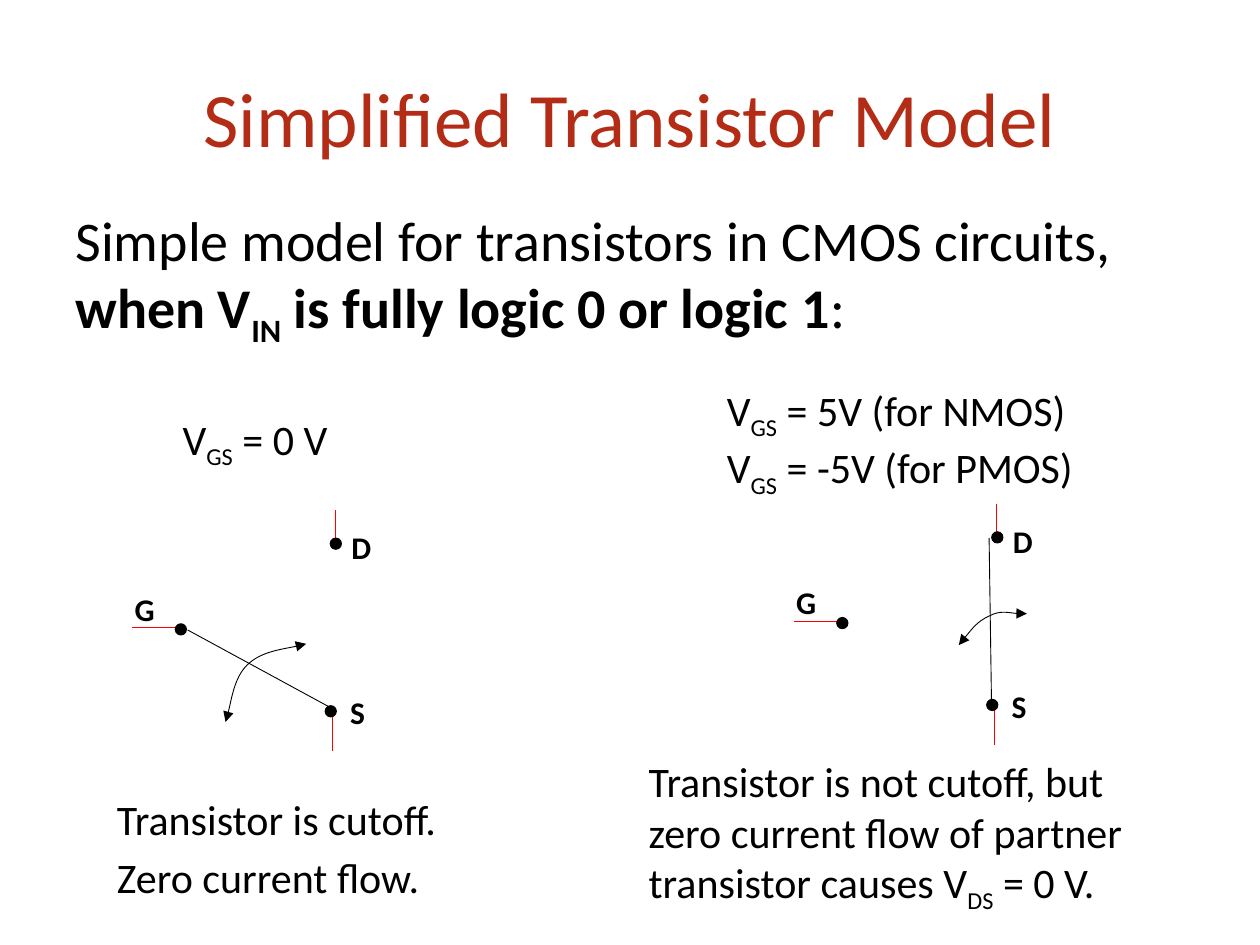
from lxml.etree import SubElement
from pptx import Presentation
from pptx.dml.color import RGBColor
from pptx.enum.shapes import MSO_CONNECTOR, MSO_SHAPE
from pptx.enum.text import MSO_ANCHOR, PP_ALIGN
from pptx.oxml.ns import qn
from pptx.util import Inches, Pt

BLACK = RGBColor(0x00, 0x00, 0x00)
RED = RGBColor(0xFF, 0x00, 0x00)
TITLE_RED = RGBColor(0xB3, 0x2C, 0x16)
DOT_SIZE = 0.09
LABEL_HEIGHT = 0.43


def add_text(slide, box, paragraphs, size, color=BLACK, bold=None, wrap=True):
    """Add a text box; each paragraph is a list of (text, style) runs, where
    style may hold "b" for bold and "_" for subscript."""
    shape = slide.shapes.add_textbox(*map(Inches, box))
    frame = shape.text_frame
    frame.word_wrap = wrap
    for index, runs in enumerate(paragraphs):
        paragraph = frame.paragraphs[0] if index == 0 else frame.add_paragraph()
        paragraph.font.name = "Calibri"
        paragraph.font.size = Pt(size)
        paragraph.font.color.rgb = color
        paragraph.font.bold = bold
        for text, style in runs:
            run = paragraph.add_run()
            run.text = text
            if "b" in style:
                run.font.bold = True
            if "_" in style:
                run.font._element.set("baseline", "-25000")
    return frame


def add_line(slide, start, end, color):
    line = slide.shapes.add_connector(
        MSO_CONNECTOR.STRAIGHT, *map(Inches, (*start, *end)))
    line.line.color.rgb = color
    line.line.width = Pt(0.5)
    SubElement(line._element.spPr, qn("a:effectLst"))


def add_dot(slide, left, top):
    dot = slide.shapes.add_shape(
        MSO_SHAPE.OVAL, Inches(left), Inches(top), Inches(DOT_SIZE), Inches(DOT_SIZE))
    dot.shadow.inherit = False
    dot.fill.solid()
    dot.fill.fore_color.rgb = BLACK
    dot.line.color.rgb = BLACK
    dot.line.width = Pt(0.5)


def add_swing_arrow(slide, points):
    """Add a double-headed curve: a start point, then three points per Bézier segment."""
    builder = slide.shapes.build_freeform(
        *map(Inches, points[0]), scale=1.0)
    builder.add_line_segments(
        [(Inches(x), Inches(y)) for x, y in points[1:]], close=False)
    curve = builder.convert_to_shape()
    curve.shadow.inherit = False
    curve.fill.background()
    curve.line.color.rgb = BLACK
    curve.line.width = Pt(0.5)

    outline = next(curve._element.iter(qn("a:path")))
    steps = outline.findall(qn("a:lnTo"))
    for first in range(0, len(steps), 3):
        bezier = SubElement(outline, qn("a:cubicBezTo"))
        for step in steps[first:first + 3]:
            bezier.append(step[0])
            outline.remove(step)

    for end in ("a:headEnd", "a:tailEnd"):
        SubElement(curve.line._get_or_add_ln(), qn(end), type="triangle")


def add_switch(slide, dx, dy, lever, swing):
    """Add the drain, gate and source terminals moved by (dx, dy), then lever and swing."""
    for start, end in (((2.66, 4.05), (2.66, 4.29)),
                       ((2.64, 5.63), (2.64, 5.96)),
                       ((1.05, 4.98), (1.43, 4.98))):
        add_line(slide, (start[0] + dx, start[1] + dy),
                 (end[0] + dx, end[1] + dy), RED)
    for left, top in ((1.39, 4.95), (2.58, 5.6), (2.62, 4.27)):
        add_dot(slide, left + dx, top + dy)
    for name, left, top in (("D", 2.69, 4.14), ("G", 0.97, 4.63), ("S", 2.68, 5.45)):
        add_text(slide, (left + dx, top + dy, 0.4, LABEL_HEIGHT),
                 [[(name, "")]], 18, bold=True)
    add_line(slide, *lever, BLACK)
    add_swing_arrow(slide, swing)


def gate_voltage(value):
    return [("V", ""), ("GS", "_"), (f" = {value}", "")]


def main():
    presentation = Presentation()
    presentation.slide_width = Inches(10)
    presentation.slide_height = Inches(7.5)
    slide = presentation.slides.add_slide(presentation.slide_layouts[6])

    title = add_text(slide, (0.5, 0.3, 9, 1.25),
                     [[("Simplified Transistor Model", "")]], 44, TITLE_RED)
    title.vertical_anchor = MSO_ANCHOR.MIDDLE
    title.paragraphs[0].alignment = PP_ALIGN.CENTER
    add_text(slide, (0.5, 1.58, 9.17, 4.75), [[
        ("Simple model for transistors in CMOS circuits, ", ""),
        ("when V", "b"), ("IN", "b_"),
        (" is fully logic 0 or logic 1", "b"), (":", "")]], 32)

    add_switch(slide, 0, 0, ((1.49, 5), (2.63, 5.62)),
               [(1.79, 5.73), (1.82, 5.65), (1.86, 5.38), (1.96, 5.28),
                (2.07, 5.17), (2.33, 5.14), (2.43, 5.11)])
    add_switch(slide, 5.25, -0.05, ((7.85, 4.27), (7.87, 5.62)),
               [(7.61, 5.12), (7.69, 5.02), (7.76, 4.93), (7.85, 4.89),
                (7.94, 4.84), (8.1, 4.88), (8.15, 4.87)])

    add_text(slide, (1.35, 3.23, 1.62, 0.5), [gate_voltage("0 V")], 24, wrap=False)
    add_text(slide, (5.67, 3, 3, 0.91),
             [gate_voltage("5V (for NMOS)"), gate_voltage("-5V (for PMOS)")],
             24, wrap=False)

    cutoff = add_text(slide, (0.83, 6.25, 3.67, 0.98),
                      [[("Transistor is cutoff.", "")],
                       [("Zero current flow.", "")]], 24)
    cutoff.paragraphs[1].space_before = Pt(12)
    cutoff.paragraphs[1].line_spacing = 0.7
    add_text(slide, (5.05, 5.95, 4.33, 1.3), [[
        ("Transistor is not cutoff, but zero current flow of partner "
         "transistor causes V", ""), ("DS", "_"), (" = 0 V.", "")]], 24)

    presentation.save("out.pptx")


if __name__ == "__main__":
    main()
